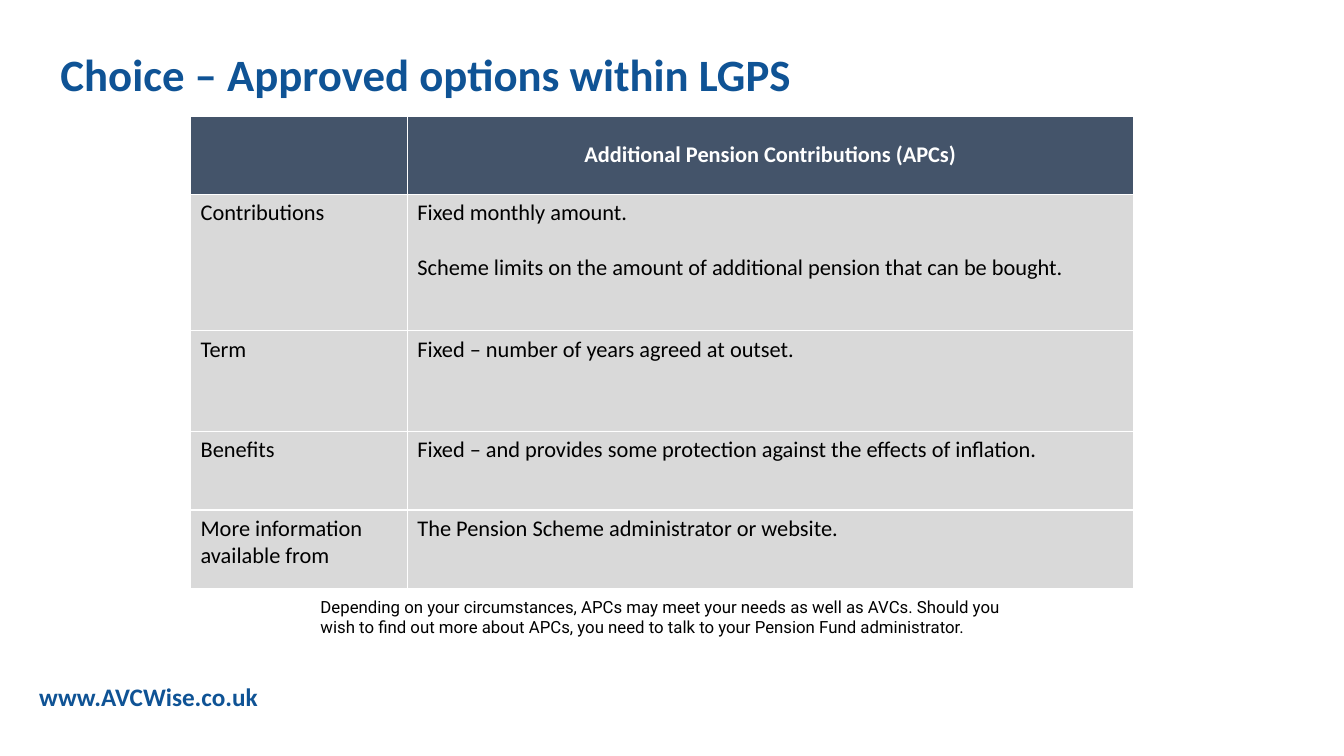
from pptx import Presentation
from pptx.dml.color import RGBColor
from pptx.enum.text import MSO_ANCHOR as Anchor, MSO_AUTO_SIZE as AutoSize, PP_ALIGN as Align
from pptx.util import Inches, Pt

COLORS = {"blue": "0F5395", "slate": "44546A", "grey": "D9D9D9", "white": "FFFFFF", "black": "000000"}

TITLE = "Choice – Approved options within LGPS"
WEBSITE = "www.AVCWise.co.uk"
NOTE = (
    "Depending on your circumstances, APCs may meet your needs as well as AVCs. "
    "Should you wish to find out more about APCs, you need to talk to your Pension Fund administrator."
)
ROWS = [
    ("", ["Additional Pension Contributions (APCs)"]),
    ("Contributions", ["Fixed monthly amount.",
                       "Scheme limits on the amount of additional pension that can be bought."]),
    ("Term", ["Fixed – number of years agreed at outset."]),
    ("Benefits", ["Fixed – and provides some protection against the effects of inflation."]),
    ("More information available from", ["The Pension Scheme administrator or website."]),
]
COLUMN_WIDTHS = [2.15, 7.2]
ROW_HEIGHTS = [0.78, 1.35, 1, 0.78, 0.78]
TABLE_LEFT, TABLE_TOP = 1.89, 1.15
PARAGRAPH_GAP = 19.5

BOXES = {
    "title": (0.5, 0.47, 12.42, 0.72),
    "website": (0.29, 6.71, 3.09, 0.4),
    "note": (3.08, 5.87, 7.18, 0.5),
}
FORMATS = {
    "title": ({"name": "Calibri", "size": Pt(32), "bold": True}, "blue"),
    "website": ({"name": "Calibri", "size": Pt(18), "bold": True}, "blue"),
    "note": ({"name": "Roboto", "size": Pt(12), "bold": False}, "black"),
    "header": ({"name": "Calibri", "size": Pt(16), "bold": True}, "white"),
    "body": ({"name": "Calibri", "size": Pt(16), "bold": False}, "black"),
}


def color(name):
    return RGBColor.from_string(COLORS[name])


def write(text_frame, lines, style):
    values, color_name = FORMATS[style]
    for index, line in enumerate(lines):
        paragraph = text_frame.add_paragraph() if index else text_frame.paragraphs[0]
        paragraph.text = line
        if index:
            paragraph.space_before = Pt(PARAGRAPH_GAP)
        for attribute, value in values.items():
            setattr(paragraph.font, attribute, value)
        paragraph.font.color.rgb = color(color_name)


def add_title(slide):
    title = slide.shapes.title
    for attribute, value in zip(("left", "top", "width", "height"), BOXES["title"]):
        setattr(title, attribute, Inches(value))
    frame = title.text_frame
    frame.auto_size = AutoSize.NONE
    frame.word_wrap = True
    frame.vertical_anchor = Anchor.TOP
    write(frame, [TITLE], "title")
    frame.paragraphs[0].alignment = Align.LEFT
    frame.paragraphs[0].line_spacing = 0.9


def add_text(slide, name, text):
    frame = slide.shapes.add_textbox(*map(Inches, BOXES[name])).text_frame
    frame.word_wrap = True
    write(frame, [text], name)


def add_options_table(slide):
    table = slide.shapes.add_table(
        len(ROWS), len(COLUMN_WIDTHS), Inches(TABLE_LEFT), Inches(TABLE_TOP),
        Inches(sum(COLUMN_WIDTHS)), Inches(sum(ROW_HEIGHTS)),
    ).table
    table.horz_banding = False
    for column, width in zip(table.columns, COLUMN_WIDTHS):
        column.width = Inches(width)
    for row, height, (label, lines) in zip(table.rows, ROW_HEIGHTS, ROWS):
        row.height = Inches(height)
        is_header = not label
        for cell, content in zip(row.cells, ([label], lines)):
            cell.fill.solid()
            cell.fill.fore_color.rgb = color("slate" if is_header else "grey")
            write(cell.text_frame, content, "header" if is_header else "body")
            if is_header:
                cell.vertical_anchor = Anchor.MIDDLE
                cell.text_frame.paragraphs[0].alignment = Align.CENTER


def main():
    presentation = Presentation()
    presentation.slide_width = Inches(13.33)
    presentation.slide_height = Inches(7.5)
    slide = presentation.slides.add_slide(presentation.slide_layouts[5])
    add_title(slide)
    add_options_table(slide)
    add_text(slide, "note", NOTE)
    add_text(slide, "website", WEBSITE)
    presentation.save("out.pptx")


if __name__ == "__main__":
    main()
